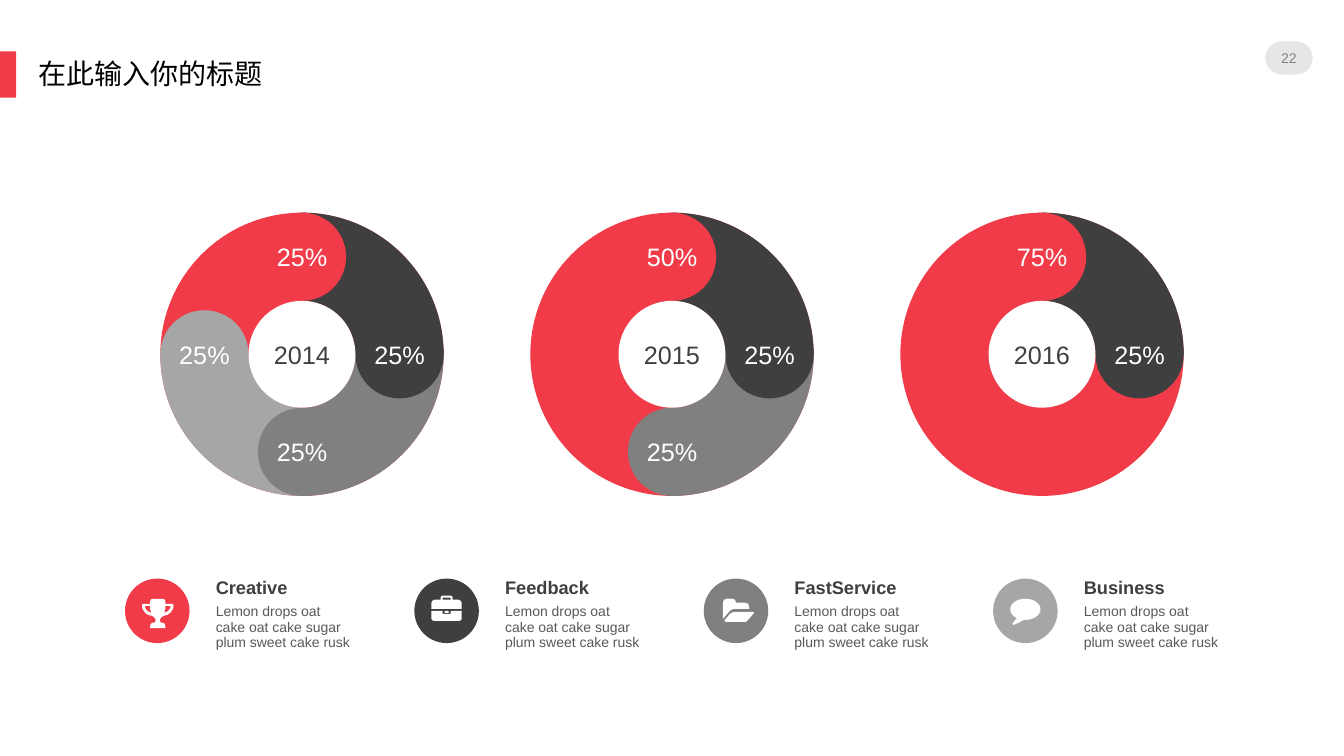
from dataclasses import dataclass
from math import cos, radians, sin

from pptx import Presentation
from pptx.dml.color import RGBColor
from pptx.enum.shapes import MSO_SHAPE
from pptx.enum.text import MSO_ANCHOR, MSO_AUTO_SIZE, PP_ALIGN
from pptx.util import Inches, Pt


@dataclass(frozen=True)
class Theme:
    red: str = "F23B48"
    dark: str = "3F3F3F"
    gray: str = "808080"
    pale: str = "A6A6A6"
    pill: str = "E7E6E6"
    white: str = "FFFFFF"
    black: str = "000000"
    year: str = "404040"
    body: str = "595959"
    font: str = "Arial"
    title: int = 20
    value: int = 18
    head: int = 13
    small: int = 10


T = Theme()

# Ring shares, clockwise from the top: colour and label of each quarter
RINGS = [
    ("2014", [(T.dark, "25%"), (T.gray, "25%"), (T.pale, "25%"), (T.red, "25%")]),
    ("2015", [(T.dark, "25%"), (T.gray, "25%"), (T.red, ""), (T.red, "50%")]),
    ("2016", [(T.dark, "25%"), (T.red, ""), (T.red, ""), (T.red, "75%")]),
]
BLURB = "Lemon drops oat cake oat cake sugar plum sweet cake rusk"


def arc(x, y, rx, ry, start, end, steps=48):
    """Points along an elliptical arc, angles in degrees."""
    turns = [radians(start + (end - start) * i / steps) for i in range(steps + 1)]
    return [(x + rx * cos(a), y + ry * sin(a)) for a in turns]


def mirror(half, width):
    """Close a right-hand outline with its left-hand reflection."""
    return half + [(width - x, y) for x, y in reversed(half)]


# Icon outlines, in hundredths of an inch
HANDLE = [(23, 7), (28, 7), (28, 9), (26, 12), (22, 14), (23, 10)]
TROPHY = [
    mirror([(21, 0), (22.5, 1), (23, 2.5), (23, 5), (30, 5), (31, 6), (31, 9),
            (30, 11), (28, 14), (25, 16), (21, 17), (19, 18.5), (18, 20),
            (17.5, 21.5), (18.5, 23.5), (21, 24), (22.5, 25), (23, 27),
            (23, 29)], 31),
    HANDLE,
    [(31 - x, y) for x, y in HANDLE],
]
CASE = [
    mirror([(19, 0), (20.5, 0.5), (21, 2), (21, 4), (27, 4), (29, 5), (30, 7),
            (30, 13)], 30),
    mirror([(19, 2), (19, 4)], 30),
    mirror([(19, 18), (19, 15), (30, 15), (30, 23), (29, 24.5), (27, 25)], 30),
    mirror([(17, 15), (17, 17)], 30),
]
FOLDER = [
    [(12, 13), (30, 13), (31, 14), (25, 21), (23, 23), (3, 23), (1.5, 22),
     (2, 21), (7, 15), (9.5, 13.5)],
    [(4, 0), (9, 0), (12, 1), (13, 4), (22, 4), (25, 5), (26, 8), (26, 10),
     (12, 10), (8, 11), (6, 13), (0, 20), (0, 4), (1, 1)],
]
BUBBLE = [arc(15, 10.5, 15, 10.5, 95, -235) + [(6, 20), (2, 25), (3, 26), (8, 24)]]

# Legend: name, colour, icon, icon offset within its disc
ITEMS = [
    ("Creative", T.red, TROPHY, (0.17, 0.2)),
    ("Feedback", T.dark, CASE, (0.17, 0.17)),
    ("FastService", T.gray, FOLDER, (0.19, 0.2)),
    ("Business", T.pale, BUBBLE, (0.17, 0.2)),
]


def put(shape, text, size, color, bold=False, align=PP_ALIGN.CENTER,
        anchor=MSO_ANCHOR.MIDDLE, inset=(0, 0), spacing=1.0):
    """Write formatted text into a shape, box or placeholder."""
    frame = shape.text_frame
    frame.word_wrap = True
    frame.auto_size = MSO_AUTO_SIZE.NONE
    frame.vertical_anchor = anchor
    frame.margin_left = frame.margin_right = Inches(inset[0])
    frame.margin_top = frame.margin_bottom = Inches(inset[1])
    para = frame.paragraphs[0]
    para.alignment = align
    para.line_spacing = spacing
    run = para.add_run()
    run.text = text
    run.font.name = T.font
    run.font.size = Pt(size)
    run.font.bold = bold
    run.font.color.rgb = RGBColor.from_string(color)


def paint(shape, color):
    shape.shadow.inherit = False
    shape.fill.solid()
    shape.fill.fore_color.rgb = RGBColor.from_string(color)
    shape.line.fill.background()
    return shape


def solid(slide, kind, x, y, w, h, color):
    box = map(Inches, (x, y, w, h))
    return paint(slide.shapes.add_shape(kind, *box), color)


def disc(slide, x, y, radius, color):
    """A circle around a centre point."""
    return solid(slide, MSO_SHAPE.OVAL, x - radius, y - radius,
                 2 * radius, 2 * radius, color)


def trace(slide, loops, x, y, unit, color):
    """One filled outline made of closed loops."""
    loops = [[(Inches(x + px * unit), Inches(y + py * unit)) for px, py in loop]
             for loop in loops]
    pen = slide.shapes.build_freeform(*loops[0][0])
    for i, loop in enumerate(loops):
        if i:
            pen.move_to(*loop[0])
        pen.add_line_segments(loop[1:], close=True)
    return paint(pen.convert_to_shape(), color)


def note(slide, x, y, w, h, text, **style):
    box = slide.shapes.add_textbox(*map(Inches, (x, y, w, h)))
    put(box, text, align=PP_ALIGN.LEFT, anchor=MSO_ANCHOR.TOP, spacing=0.9, **style)


def header(slide, x, y, w):
    # Accent bar, title and page pill
    solid(slide, MSO_SHAPE.RECTANGLE, x, y + 0.1, 0.16, 0.46, T.red)
    title = slide.shapes.title
    title.left, title.top = Inches(x + 0.28), Inches(y + 0.14)
    title.width, title.height = Inches(4.17), Inches(0.46)
    put(title, "在此输入你的标题", size=T.title, color=T.black, spacing=0.9,
        align=PP_ALIGN.LEFT, anchor=MSO_ANCHOR.TOP, inset=(0.1, 0.05))
    pill = solid(slide, MSO_SHAPE.ROUNDED_RECTANGLE, x + w - 0.78, y, 0.47, 0.33, T.pill)
    pill.adjustments[0] = 0.5
    put(pill, "22", size=T.small, color=T.gray)


def ring(slide, x, y, size, year, parts):
    # Base disc, quarter bands, rounded ends, then the hub
    outer, inner = size / 2, 0.53
    cap = (outer - inner) / 2
    mid = inner + cap
    x, y = x + outer, y + outer
    disc(slide, x, y, outer, T.red)
    for i, (color, _) in enumerate(parts):
        if color != T.red:
            start = 90 * i - 90
            band = (arc(0, 0, outer, outer, start, start + 90)
                    + arc(0, 0, inner, inner, start + 90, start))
            trace(slide, [band], x, y, 1, color)
    for i, (color, label) in enumerate(parts):
        if label:
            turn = radians(90 * i)
            end = disc(slide, x + mid * cos(turn), y + mid * sin(turn), cap, color)
            put(end, label, size=T.value, color=T.white)
    put(disc(slide, x, y, inner, T.white), year, size=T.value, color=T.year)


def legend(slide, x, y, name, color, icon, shift):
    # Icon disc with heading and text beside it
    disc(slide, x + 0.32, y + 0.32, 0.32, color)
    trace(slide, icon, x + shift[0], y + shift[1], 0.01, T.white)
    note(slide, x + 0.9, y, 1.35, 0.26, name, size=T.head, color=T.dark, bold=True)
    note(slide, x + 0.9, y + 0.26, 1.35, 0.59, BLURB, size=T.small, color=T.body)


def main():
    deck = Presentation()
    deck.slide_width, deck.slide_height = Inches(13.33), Inches(7.5)
    slide = deck.slides.add_slide(deck.slide_layouts[5])
    header(slide, 0, 0.41, 13.33)
    for i, (year, parts) in enumerate(RINGS):
        ring(slide, 1.59 + 3.67 * i, 2.11, 2.81, year, parts)
    for i, item in enumerate(ITEMS):
        legend(slide, 1.24 + 2.87 * i, 5.74, *item)
    deck.save("out.pptx")


if __name__ == "__main__":
    main()
